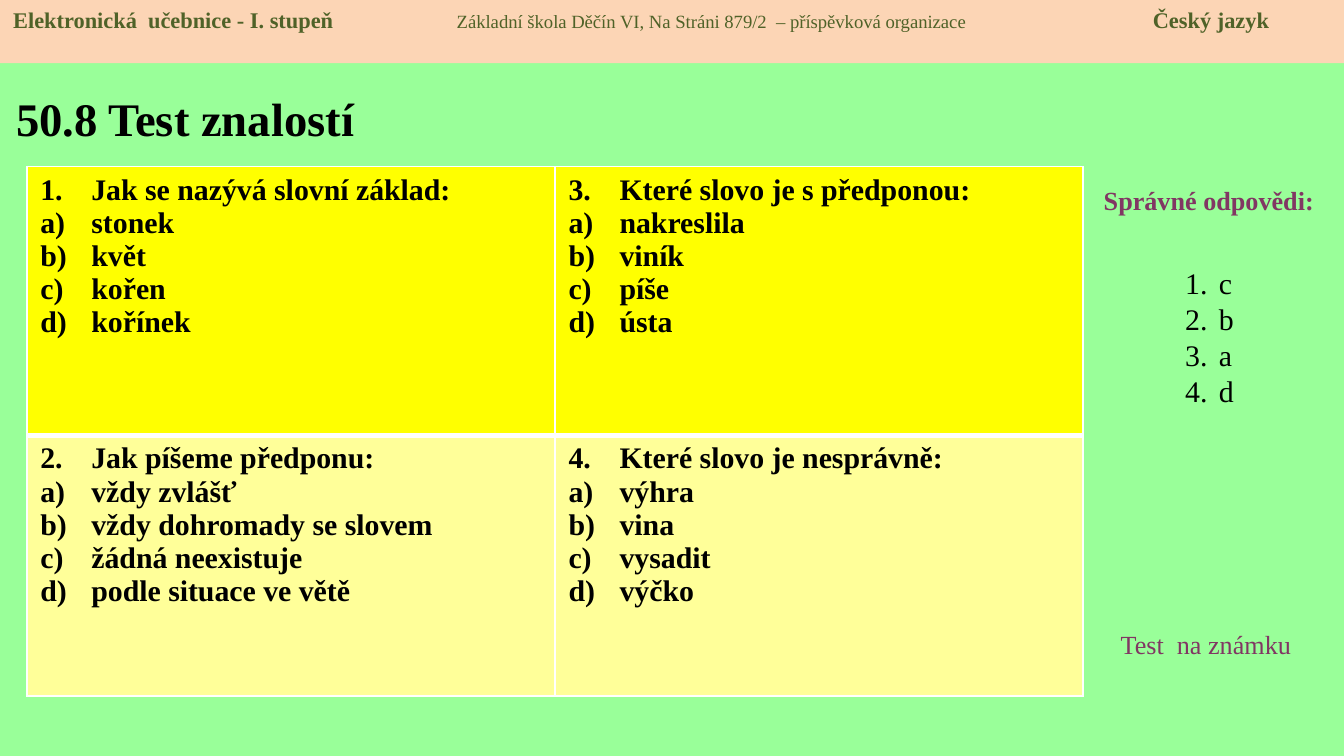
import dataclasses

import pptx
import pptx.dml.color
import pptx.enum.shapes
import pptx.enum.text
import pptx.oxml.ns
import pptx.util
from lxml import etree

Inches = pptx.util.Inches
Pt = pptx.util.Pt
qn = pptx.oxml.ns.qn
Align = pptx.enum.text.PP_ALIGN
Anchor = pptx.enum.text.MSO_ANCHOR


@dataclasses.dataclass(frozen=True)
class Theme:
    font: str = "Times New Roman"
    page: str = "99FF99"
    band: str = "FCD5B5"
    band_text: str = "4F6228"
    ink: str = "000000"
    accent: str = "813763"
    border: str = "FFFFFF"
    row_fills: tuple = ("FFFF00", "FFFF99")
    title_size: float = 25
    body_size: float = 16
    note_size: float = 14
    band_size: float = 12
    school_size: float = 10


def rgb(value):
    return pptx.dml.color.RGBColor.from_string(value)


class PageBuilder:
    def __init__(self, deck, theme):
        self.theme = theme
        self.page = deck.slides.add_slide(deck.slide_layouts[5])
        self.page.background.fill.solid()
        self.page.background.fill.fore_color.rgb = rgb(theme.page)

    def add_span(self, para, text, size, color, bold=False):
        span = para.add_run()
        span.text = text
        span.font.name = self.theme.font
        span.font.size = Pt(size)
        span.font.bold = bold
        span.font.color.rgb = rgb(color)

    def next_para(self, frame, first):
        return frame.paragraphs[0] if first else frame.add_paragraph()

    def indent(self, para, width, numbering=None):
        props = para._p.get_or_add_pPr()
        props.set("marL", str(Inches(width)))
        props.set("indent", str(-Inches(width)))
        if numbering:
            etree.SubElement(props, qn("a:buFont"), typeface="+mj-lt")
            etree.SubElement(props, qn("a:buAutoNum"), type=numbering)

    def add_tabs(self, para, stops):
        tabs = etree.SubElement(para._p.get_or_add_pPr(), qn("a:tabLst"))
        for stop in stops:
            etree.SubElement(tabs, qn("a:tab"), pos=str(Inches(stop)), algn="l")

    def title(self, text, left, top, width, height):
        box = self.page.shapes.title
        box.left, box.top = Inches(left), Inches(top)
        box.width, box.height = Inches(width), Inches(height)
        box.text_frame.vertical_anchor = Anchor.MIDDLE
        para = box.text_frame.paragraphs[0]
        para.alignment = Align.LEFT
        self.add_span(para, text, self.theme.title_size, self.theme.ink, True)

    def text_box(self, left, top, width, height):
        box = self.page.shapes.add_textbox(
            Inches(left), Inches(top), Inches(width), Inches(height))
        box.text_frame.word_wrap = True
        return box.text_frame

    def note(self, text, left, top, width, height, bold=False, align=Align.LEFT):
        para = self.text_box(left, top, width, height).paragraphs[0]
        para.alignment = align
        self.add_span(para, text, self.theme.note_size, self.theme.accent, bold)

    def answers(self, letters, left, top, width, height):
        frame = self.text_box(left, top, width, height)
        frame.margin_top = Inches(0.32)
        for index, letter in enumerate(letters):
            para = self.next_para(frame, index == 0)
            self.indent(para, 0.25, "arabicPeriod")
            self.add_span(para, letter, self.theme.body_size, self.theme.ink)

    def band(self, columns, stops, width, height):
        box = self.page.shapes.add_shape(
            pptx.enum.shapes.MSO_SHAPE.RECTANGLE, 0, 0, Inches(width), Inches(height))
        box.shadow.inherit = False
        box.fill.solid()
        box.fill.fore_color.rgb = rgb(self.theme.band)
        box.line.fill.background()
        box.text_frame.vertical_anchor = Anchor.TOP
        para = box.text_frame.paragraphs[0]
        para.alignment = Align.LEFT
        self.add_tabs(para, stops)
        for index, (text, size, bold) in enumerate(columns):
            lead = "\t" if index else ""
            self.add_span(para, lead + text, size, self.theme.band_text, bold)

    def cell_borders(self, cell, widths):
        props = cell._tc.get_or_add_tcPr()
        for side, width in widths.items():
            line = etree.SubElement(props, qn("a:ln" + side), w=str(Pt(width)))
            fill = etree.SubElement(line, qn("a:solidFill"))
            etree.SubElement(fill, qn("a:srgbClr"), val=self.theme.border)

    def question(self, cell, number, prompt, options):
        theme = self.theme
        frame = cell.text_frame
        lines = [f"{number}.\t{prompt}", *options]
        for index, text in enumerate(lines):
            para = self.next_para(frame, index == 0)
            self.indent(para, 0.38, "alphaLcParenR" if index else None)
            self.add_span(para, text, theme.body_size, theme.ink, True)

    def quiz_table(self, questions, left, top, column_width, row_heights):
        rows, columns = len(row_heights), len(questions) // len(row_heights)
        table = self.page.shapes.add_table(
            rows, columns, Inches(left), Inches(top),
            Inches(column_width * columns), Inches(sum(row_heights))).table
        for column in table.columns:
            column.width = Inches(column_width)
        for row, height in zip(table.rows, row_heights):
            row.height = Inches(height)
        for index, (prompt, options) in enumerate(questions):
            column, row = divmod(index, rows)
            cell = table.cell(row, column)
            self.cell_borders(cell, {
                "L": 1, "R": 1, "T": 3 if row else 1, "B": 1 if row else 3})
            cell.fill.solid()
            cell.fill.fore_color.rgb = rgb(self.theme.row_fills[row])
            self.question(cell, index + 1, prompt, options)


QUESTIONS = [
    ("Jak se nazývá slovní základ:", ["stonek", "květ", "kořen", "kořínek"]),
    ("Jak píšeme předponu:", ["vždy zvlášť", "vždy dohromady se slovem",
                              "žádná neexistuje", "podle situace ve větě"]),
    ("Které slovo je s předponou:", ["nakreslila", "viník", "píše", "ústa"]),
    ("Které slovo je nesprávně:", ["výhra", "vina", "vysadit", "výčko"]),
]


def main():
    deck = pptx.Presentation()
    deck.slide_width = Inches(10)
    deck.slide_height = deck.slide_width * 9 // 16
    theme = Theme()
    builder = PageBuilder(deck, theme)
    builder.title("50.8 Test znalostí", 0.02, 0.55, 3.19, 0.65)
    builder.note("Správné odpovědi:", 8.05, 1.32, 1.89, 0.34, True, Align.CENTER)
    builder.quiz_table(QUESTIONS, 0.2, 1.24, 3.93, [2, 1.94])
    builder.answers("cbad", 8.72, 1.65, 0.55, 1.99)
    builder.note("Test  na známku", 8.24, 4.63, 1.57, 0.34)
    builder.band([
        ("Elektronická  učebnice - I. stupeň", theme.band_size, True),
        ("Základní škola Děčín VI, Na Stráni 879/2  – příspěvková organizace",
         theme.school_size, False),
        ("Český jazyk", theme.band_size, True),
    ], [3.3, 8.48], 10, 0.47)
    deck.save("out.pptx")


if __name__ == "__main__":
    main()
